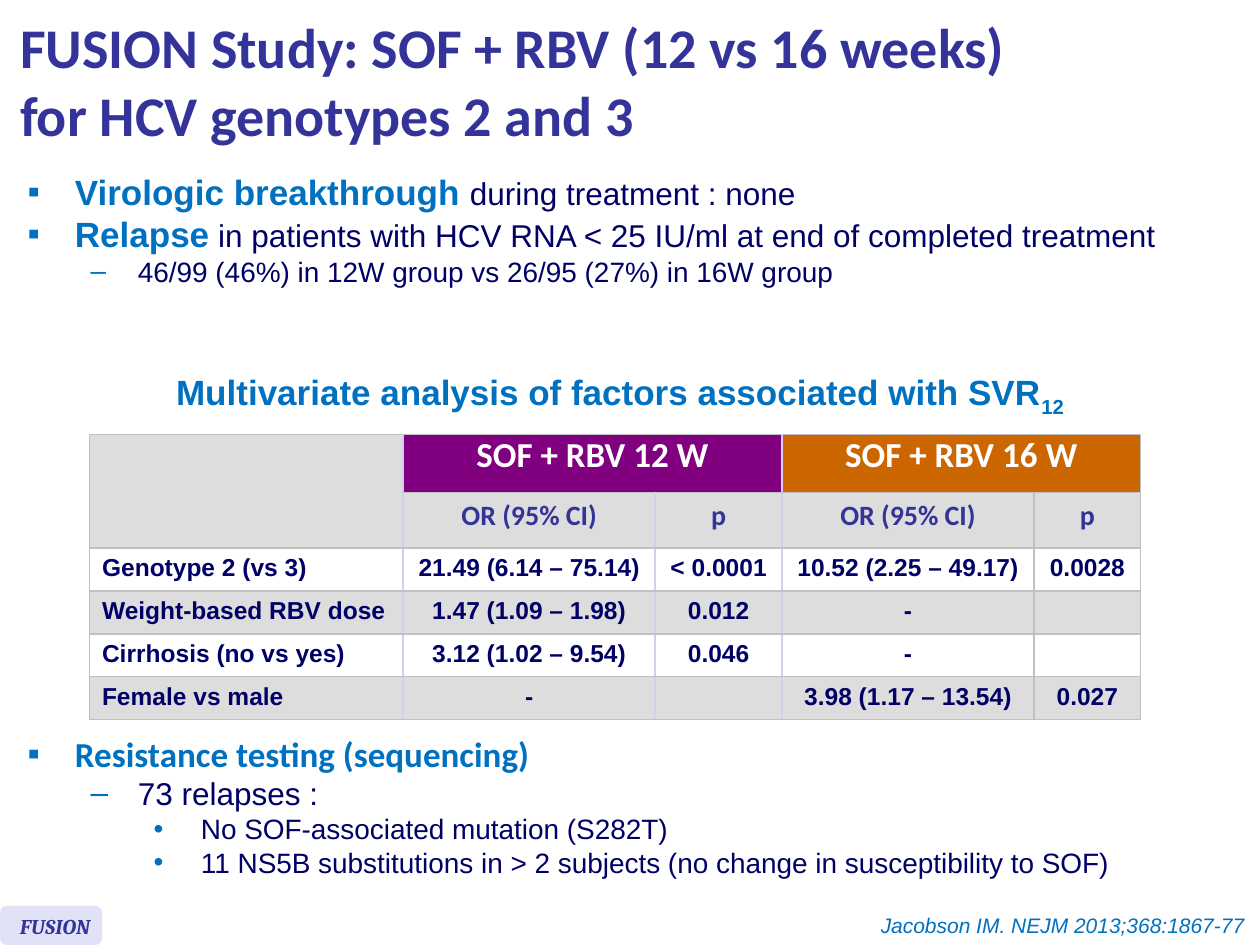
import dataclasses

import pptx
import pptx.dml.color
import pptx.enum.shapes
import pptx.enum.text
import pptx.oxml
import pptx.oxml.ns
import pptx.util

Pt = pptx.util.Pt
RGB = pptx.dml.color.RGBColor.from_string
ALIGN = pptx.enum.text.PP_ALIGN
ANCHOR = pptx.enum.text.MSO_ANCHOR
NS = pptx.oxml.ns.nsdecls("a")


@dataclasses.dataclass(frozen=True)
class Type:
    size: int
    color: str
    font: str = "Arial"
    bold: bool = False
    italic: bool = False
    baseline: int = 0


class Theme:
    blue, navy, indigo, white = "0070C0", "000066", "333399", "FFFFFF"
    purple, orange, grey, lavender = "800080", "CC6600", "DDDDDD", "E2E2F6"
    rule, soft_rule = "C0C0C0", "D0D0F0"
    title = Type(32, indigo, "Calibri", True)
    strong = Type(20, blue, bold=True)
    subscript = Type(20, blue, bold=True, baseline=-25000)
    section = Type(20, blue, "Calibri", True)
    text = Type(18, navy)
    detail = Type(16, navy)
    arm = Type(20, white, "Calibri", True)
    measure = Type(16, indigo, "Calibri", True)
    value = Type(14, navy, bold=True)
    badge = Type(12, indigo, "Cambria", True, True)
    citation = Type(12, blue, italic=True)


class Deck:
    """Holds the theme and the current slide, and draws each kind of element."""

    def __init__(self, theme):
        self.theme = theme
        self.prs = pptx.Presentation()
        self.prs.slide_width, self.prs.slide_height = Pt(720), Pt(540)
        self.s = self.prs.slides.add_slide(self.prs.slide_layouts[3])

    def style(self, r, kind):
        r.font.size, r.font.name = Pt(kind.size), kind.font
        r.font.bold, r.font.italic = kind.bold, kind.italic
        r.font.color.rgb = RGB(kind.color)
        if kind.baseline:
            r._r.get_or_add_rPr().set("baseline", str(kind.baseline))

    def runs(self, p, pieces):
        for text, kind in pieces:
            r = p.add_run()
            r.text = text
            self.style(r, kind)

    def place(self, sp, box):
        sp.left, sp.top, sp.width, sp.height = map(Pt, box)
        tf = sp.text_frame
        tf.word_wrap = True
        tf.auto_size = pptx.enum.text.MSO_AUTO_SIZE.NONE
        return tf

    def title(self, text, box):
        tf = self.place(self.s.shapes.title, box)
        tf.text = text
        tf.vertical_anchor = ANCHOR.MIDDLE
        p = tf.paragraphs[0]
        p.alignment = ALIGN.LEFT
        for r in p.runs:
            self.style(r, self.theme.title)

    def bullets(self, index, box, items):
        tf = self.place(self.s.placeholders[index], box)
        tf.vertical_anchor = ANCHOR.TOP
        for i, (level, pieces) in enumerate(items):
            p = tf.add_paragraph() if i else tf.paragraphs[0]
            p.level = level
            p.space_before = Pt(0)
            pPr = p._p.get_or_add_pPr()
            pPr.set("marL", str(Pt(27 + 36 * level)))
            pPr.set("indent", str(Pt(-27)))
            for xml in (f'<a:buClr {NS}><a:srgbClr val="{self.theme.blue}"/></a:buClr>',
                        f'<a:buFont {NS} typeface="Arial"/>',
                        f'<a:buChar {NS} char="{"▪–•"[level]}"/>'):
                pPr.append(pptx.oxml.parse_xml(xml))
            self.runs(p, pieces)

    def label(self, box, pieces, align=ALIGN.LEFT):
        tf = self.place(self.s.shapes.add_textbox(0, 0, 0, 0), box)
        tf.paragraphs[0].alignment = align
        self.runs(tf.paragraphs[0], pieces)

    def badge(self, box, color):
        shape = pptx.enum.shapes.MSO_SHAPE.ROUNDED_RECTANGLE
        sp = self.s.shapes.add_shape(shape, *map(Pt, box))
        sp.shadow.inherit = False
        sp.fill.solid()
        sp.fill.fore_color.rgb = RGB(color)
        sp.line.fill.background()

    def borders(self, cell, col):
        th = self.theme
        left = th.rule if col in (0, 4) else th.soft_rule
        right = th.rule if col >= 3 else th.soft_rule
        tcPr = cell._tc.get_or_add_tcPr()
        sides = (("lnL", left), ("lnR", right), ("lnT", th.rule), ("lnB", th.rule))
        for i, (side, color) in enumerate(sides):
            tcPr.insert(i, pptx.oxml.parse_xml(
                f'<a:{side} {NS} w="12700"><a:solidFill><a:srgbClr val="{color}"/>'
                f'</a:solidFill></a:{side}>'))

    def cell(self, cell, text, kind, fill, col):
        cell.fill.solid()
        cell.fill.fore_color.rgb = RGB(fill)
        self.borders(cell, col)
        p = cell.text_frame.paragraphs[0]
        p.alignment = ALIGN.CENTER if col else ALIGN.LEFT
        if text:
            self.runs(p, [(text, kind)])
        else:
            p._p.get_or_add_endParaRPr().set("sz", str(kind.size * 100))
        if kind == self.theme.arm:
            cell.vertical_anchor = ANCHOR.MIDDLE
            p.line_spacing = Pt(15)

    def table(self, left, top, widths, heights, rows):
        th = self.theme
        frame = self.s.shapes.add_table(len(heights), len(widths), Pt(left), Pt(top),
                                        Pt(sum(widths)), Pt(sum(heights)))
        tbl = frame.table
        tbl.first_row = tbl.horz_banding = False
        for col, width in zip(tbl.columns, widths):
            col.width = Pt(width)
        for row, height in zip(tbl.rows, heights):
            row.height = Pt(height)
        arm_fills = [th.grey, th.purple, th.purple, th.orange, th.orange]
        for i, row in enumerate(rows):
            kind = (th.arm, th.measure)[i] if i < 2 else th.value
            for j, text in enumerate(row):
                fill = arm_fills[j] if i == 0 else th.white if i in (2, 4) else th.grey
                self.cell(tbl.cell(i, j), text, kind, fill, j)
        for first, last in (((0, 0), (1, 0)), ((0, 1), (0, 2)), ((0, 3), (0, 4))):
            tbl.cell(*first).merge(tbl.cell(*last))


def main():
    th = Theme()
    deck = Deck(th)
    deck.bullets(1, (8.6, 93.6, 681, 106.6), [
        (0, [("Virologic breakthrough ", th.strong), ("during treatment : none", th.text)]),
        (0, [("Relapse", th.strong),
             (" in patients with HCV RNA < 25 IU/ml at end of completed treatment", th.text)]),
        (1, [("46/99 (46%) in 12W group vs 26/95 (27%) in 16W group", th.detail)]),
    ])
    deck.bullets(2, (8.6, 414.7, 700, 94.3), [
        (0, [("Resistance testing (sequencing)", th.section)]),
        (1, [("73 relapses :", th.text)]),
        (2, [("No SOF-associated mutation (S282T)", th.detail)]),
        (2, [("11 NS5B substitutions in > 2 subjects (no change in susceptibility to SOF)",
              th.detail)]),
    ])
    deck.badge((0, 517.7, 58.3, 22.3), th.lavender)
    deck.label((4.3, 518.4, 63.4, 21.6), [("FUSION", th.badge)])
    deck.title("FUSION Study: SOF + RBV (12 vs 16 weeks)\vfor HCV genotypes 2 and 3",
               (4.3, 2.2, 687.6, 87.1))
    deck.label((444.2, 517.7, 274.3, 21.6),
               [("Jacobson IM. NEJM 2013;368:1867-77", th.citation)], ALIGN.RIGHT)
    deck.table(51.1, 248.4, [179.3, 144, 72.5, 144, 61], [33.1, 26.8] + [24.5] * 4, [
        ["", "SOF + RBV 12 W", "", "SOF + RBV 16 W", ""],
        ["", "OR (95% CI)", "p", "OR (95% CI)", "p"],
        ["Genotype 2 (vs 3)", "21.49 (6.14 – 75.14)", "< 0.0001",
         "10.52 (2.25 – 49.17)", "0.0028"],
        ["Weight-based RBV dose", "1.47 (1.09 – 1.98)", "0.012", "-", ""],
        ["Cirrhosis (no vs yes)", "3.12 (1.02 – 9.54)", "0.046", "-", ""],
        ["Female vs male", "-", "", "3.98 (1.17 – 13.54)", "0.027"],
    ])
    deck.label((88.6, 208.1, 531.4, 31.7),
               [("Multivariate analysis of factors associated with SVR", th.strong),
                ("12", th.subscript)], ALIGN.CENTER)
    deck.prs.save("out.pptx")


if __name__ == "__main__":
    main()
